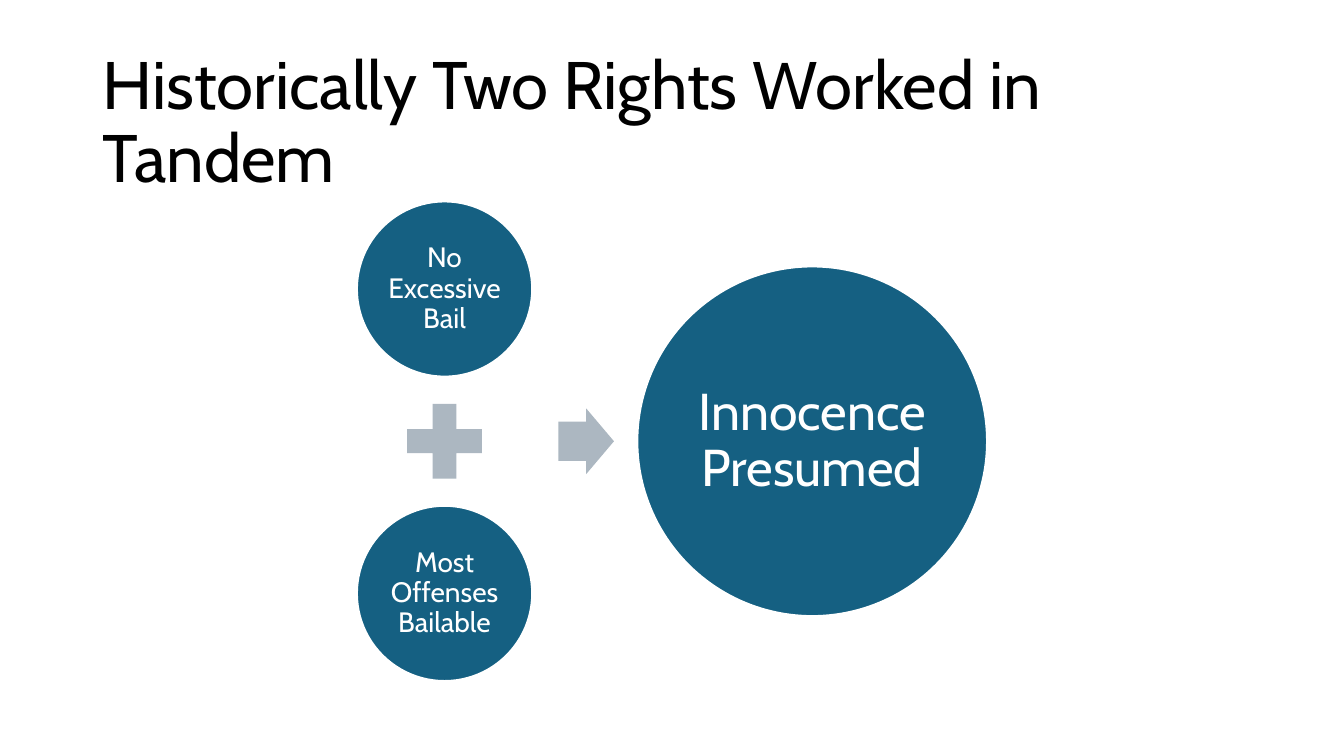
"""Build the slide on two bail rights that together presume innocence."""
from dataclasses import dataclass

from pptx import Presentation
from pptx.dml.color import RGBColor
from pptx.enum.shapes import MSO_SHAPE
from pptx.enum.text import MSO_ANCHOR, PP_ALIGN
from pptx.util import Inches, Pt

WIDTH, HEIGHT = Inches(13.33), Inches(7.5)
COL, ROW = WIDTH / 100, HEIGHT / 100
BLACK = RGBColor(0x00, 0x00, 0x00)
WHITE = RGBColor(0xFF, 0xFF, 0xFF)
BLUE = RGBColor(0x15, 0x60, 0x82)
GREY = RGBColor(0xAC, 0xB7, 0xC1)
LEFT, MIDDLE, STEP = 33.08, 58.37, 20.13


@dataclass
class Circle:
    x: float
    y: float
    cols: float
    words: str
    size: int
    inset: float


@dataclass
class Sign:
    kind: MSO_SHAPE
    x: float
    cols: float
    rows: float


CIRCLES = [
    Circle(LEFT, MIDDLE - STEP, 13.05, "No Excessive Bail", 20, 0.03),
    Circle(LEFT, MIDDLE + STEP, 13.05, "Most Offenses Bailable", 20, 0.03),
    Circle(60.43, MIDDLE, 26.03, "Innocence Presumed", 37, 0.05),
]
SIGNS = [
    Sign(MSO_SHAPE.MATH_PLUS, LEFT, 7.58, 13.47),
    Sign(MSO_SHAPE.RIGHT_ARROW, 43.62, 4.13, 8.67),
]


def write(shape, words: str, *, size: int, color: RGBColor,
          align=PP_ALIGN.LEFT, inset: float | None = None) -> None:
    frame = shape.text_frame
    frame.word_wrap = True
    frame.vertical_anchor = MSO_ANCHOR.MIDDLE
    if inset is not None:
        frame.margin_left = frame.margin_right = Inches(inset)
        frame.margin_top = frame.margin_bottom = Inches(inset)
    para = frame.paragraphs[0]
    para.alignment = align
    para.line_spacing = 0.9
    run = para.add_run()
    run.text = words
    run.font.name = "Cabin"
    run.font.size = Pt(size)
    run.font.color.rgb = color


def place(slide, kind: MSO_SHAPE, x: float, y: float,
          wide: int, high: int, fill: RGBColor):
    shape = slide.shapes.add_shape(
        kind, int(x * COL - wide / 2), int(y * ROW - high / 2), wide, high)
    shape.shadow.inherit = False
    shape.fill.solid()
    shape.fill.fore_color.rgb = fill
    shape.line.fill.background()
    return shape


def draw_circle(slide, item: Circle) -> None:
    side = int(item.cols * COL)
    shape = place(slide, MSO_SHAPE.OVAL, item.x, item.y, side, side, BLUE)
    shape.line.color.rgb = WHITE
    shape.line.width = Pt(1.5)
    write(shape, item.words, size=item.size, color=WHITE,
          align=PP_ALIGN.CENTER, inset=item.inset)


def draw_sign(slide, item: Sign) -> None:
    shape = place(slide, item.kind, item.x, MIDDLE,
                  int(item.cols * COL), int(item.rows * ROW), GREY)
    if item.kind == MSO_SHAPE.RIGHT_ARROW:
        shape.adjustments[0] = 0.6


def main() -> None:
    deck = Presentation()
    deck.slide_width, deck.slide_height = WIDTH, HEIGHT
    slide = deck.slides.add_slide(deck.slide_layouts[6])
    title = slide.shapes.add_textbox(
        int(6.9 * COL), int(8.13 * ROW), int(86.27 * COL), int(16.53 * ROW))
    write(title, "Historically Two Rights Worked in Tandem",
          size=48, color=BLACK)
    for item in CIRCLES:
        draw_circle(slide, item)
    for item in SIGNS:
        draw_sign(slide, item)
    deck.save("out.pptx")


if __name__ == "__main__":
    main()
